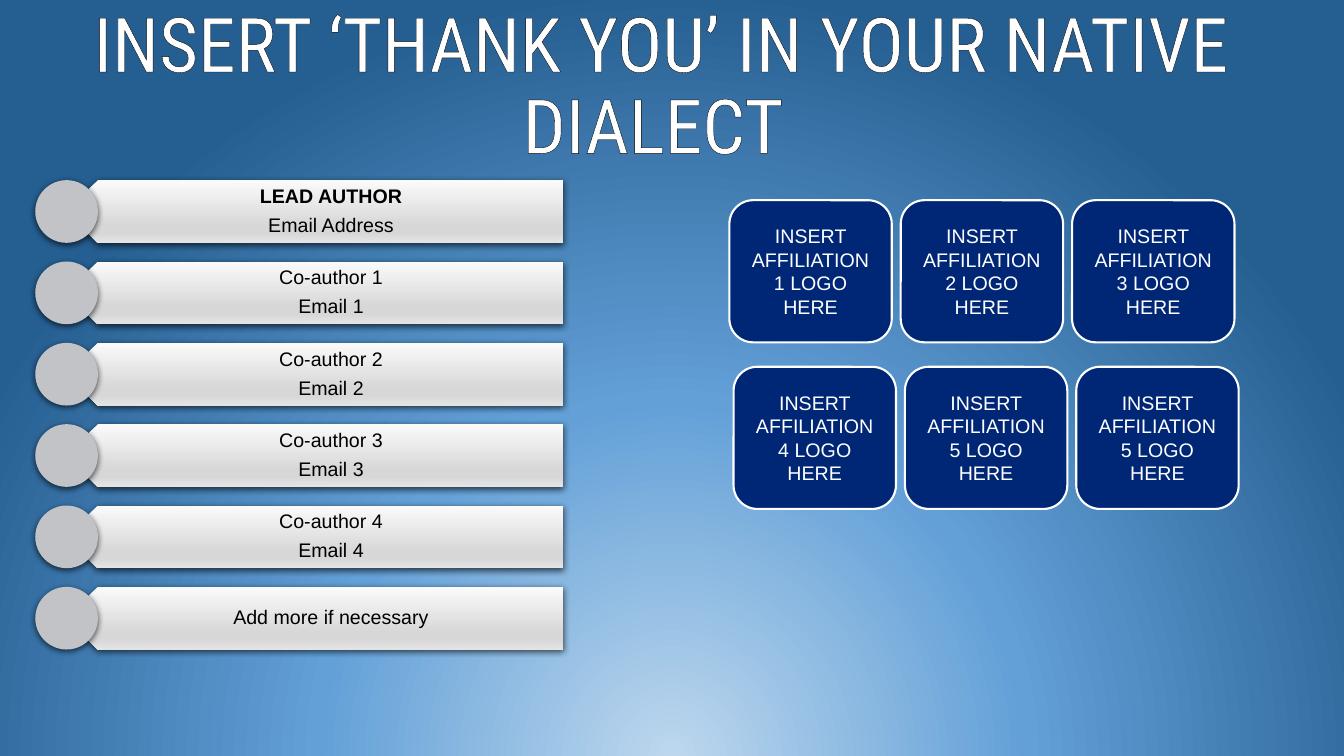
from lxml import etree
from pptx import Presentation
from pptx.dml.color import RGBColor
from pptx.enum.shapes import MSO_SHAPE
from pptx.enum.text import MSO_ANCHOR, PP_ALIGN
from pptx.oxml import parse_xml
from pptx.oxml.ns import nsdecls, qn
from pptx.util import Pt

BAR = MSO_SHAPE.PENTAGON
CIRCLE = MSO_SHAPE.OVAL
ROUNDED = MSO_SHAPE.ROUNDED_RECTANGLE
MIDDLE = MSO_ANCHOR.MIDDLE
CENTER = PP_ALIGN.CENTER

COLORS = {"white": "FFFFFF", "black": "000000", "navy": "002776", "silver": "C1C3C7"}
SKY = [(0, "BDD7EE"), (46, "63A0D7"), (100, "255E91")]
METAL = [(0, "FAFAFA"), (74, "D7D7D7"), (83, "D7D7D7"), (100, "E4E4E4")]
SKY_PATH = '<a:path path="circle"><a:fillToRect l="50000" t="130000" r="50000" b="-30000"/></a:path>'
METAL_ANGLE = '<a:lin ang="5400000" scaled="0"/>'

TITLE = "INSERT ‘THANK YOU’ IN YOUR NATIVE DIALECT "
AUTHORS = [
    ["LEAD AUTHOR", "Email Address"],
    *[[f"Co-author {number}", f"Email {number}"] for number in range(1, 5)],
    ["Add more if necessary"],
]
AFFILIATION_ROWS = [
    {"left": 521, "top": 143, "numbers": [1, 2, 3]},
    {"left": 524, "top": 262, "numbers": [4, 5, 5]},
]


def rgb(name):
    return RGBColor.from_string(COLORS[name])


def gradient(stops, direction):
    marks = "".join(
        f'<a:gs pos="{position * 1000}"><a:srgbClr val="{color}"/></a:gs>'
        for position, color in stops
    )
    return parse_xml(
        f'<a:gradFill {nsdecls("a")} rotWithShape="0">'
        f"<a:gsLst>{marks}</a:gsLst>{direction}</a:gradFill>"
    )


def paint_background(page):
    page.background.fill.solid()
    properties = page._element.find(".//" + qn("p:bgPr"))
    properties.replace(properties[0], gradient(SKY, SKY_PATH))


def add_filled(shapes, kind, place, color):
    shape = shapes.add_shape(kind, *map(Pt, place))
    shape.shadow.inherit = False
    shape.fill.solid()
    shape.fill.fore_color.rgb = rgb(color)
    shape.line.fill.background()
    return shape


def add_shadow(shape):
    effects = shape._element.spPr.find(qn("a:effectLst"))
    effects.append(parse_xml(
        f'<a:outerShdw {nsdecls("a")} blurRad="{Pt(4.5)}" dist="{Pt(1.5)}" '
        'dir="5400000" algn="ctr" rotWithShape="0">'
        f'<a:srgbClr val="{COLORS["black"]}"><a:alpha val="63000"/></a:srgbClr></a:outerShdw>'
    ))


def write(shape, lines, frame_format, para_format, font_format, color):
    frame = shape.text_frame
    for name, value in {"word_wrap": True, "vertical_anchor": MIDDLE, **frame_format}.items():
        setattr(frame, name, value)
    spans = []
    for index, line in enumerate(lines):
        para = frame.paragraphs[0] if index == 0 else frame.add_paragraph()
        for name, value in {"alignment": CENTER, **para_format}.items():
            setattr(para, name, value)
        span = para.add_run()
        span.text = line
        for name, value in font_format.items():
            setattr(span.font, name, value)
        span.font.color.rgb = rgb(color)
        spans.append(span)
    return spans


def add_title(page):
    box = page.shapes.add_textbox(*map(Pt, (25, 10.8, 894.5, 104.5)))
    span = write(box, [TITLE], {}, {"line_spacing": 0.9},
                 {"size": Pt(54), "name": "Roboto Condensed"}, "white")[0]
    outline = parse_xml(
        f'<a:ln {nsdecls("a")} w="{Pt(0.75)}"><a:solidFill>'
        f'<a:srgbClr val="{COLORS["black"]}"/></a:solidFill></a:ln>'
    )
    span.font._element.insert(0, outline)


def add_author(shapes, top, lines):
    height = 44.8
    bar = add_filled(shapes, BAR, (47.5, top, 355, height), "silver")
    bar.rotation = 180
    properties = bar._element.spPr
    properties.replace(properties.find(qn("a:solidFill")), gradient(METAL, METAL_ANGLE))
    add_shadow(bar)

    box = shapes.add_textbox(*map(Pt, (59, top, 343.5, height)))
    insets = {"margin_left": Pt(19.5), "margin_right": Pt(8),
              "margin_top": Pt(4.3), "margin_bottom": Pt(4.3)}
    spacing = {"line_spacing": 0.9, "space_after": Pt(5.6)}
    return_spans = write(box, lines, insets, spacing, {"size": Pt(14), "name": "Arial"}, "black")

    add_shadow(add_filled(shapes, CIRCLE, (25.2, top, height, height), "silver"))
    return return_spans


def add_authors(page):
    group = page.shapes.add_group_shape()
    for index, lines in enumerate(AUTHORS):
        spans = add_author(group.shapes, 128.7 + 58.1 * index, lines)
        spans[0].font.bold = index == 0


def add_affiliations(page):
    for row in AFFILIATION_ROWS:
        for column, number in enumerate(row["numbers"]):
            place = (row["left"] + 122.4 * column, row["top"], 116, 101.5)
            tile = add_filled(page.shapes, ROUNDED, place, "navy")
            tile.line.color.rgb = rgb("white")
            tile.line.width = Pt(1.5)
            write(tile, [f"INSERT AFFILIATION {number} LOGO", "HERE"], {}, {},
                  {"size": Pt(14), "name": "Arial"}, "white")


def main():
    deck = Presentation()
    deck.slide_width, deck.slide_height = Pt(960), Pt(540)
    page = deck.slides.add_slide(deck.slide_layouts[6])
    paint_background(page)
    add_title(page)
    add_authors(page)
    add_affiliations(page)
    deck.save("out.pptx")


if __name__ == "__main__":
    main()
